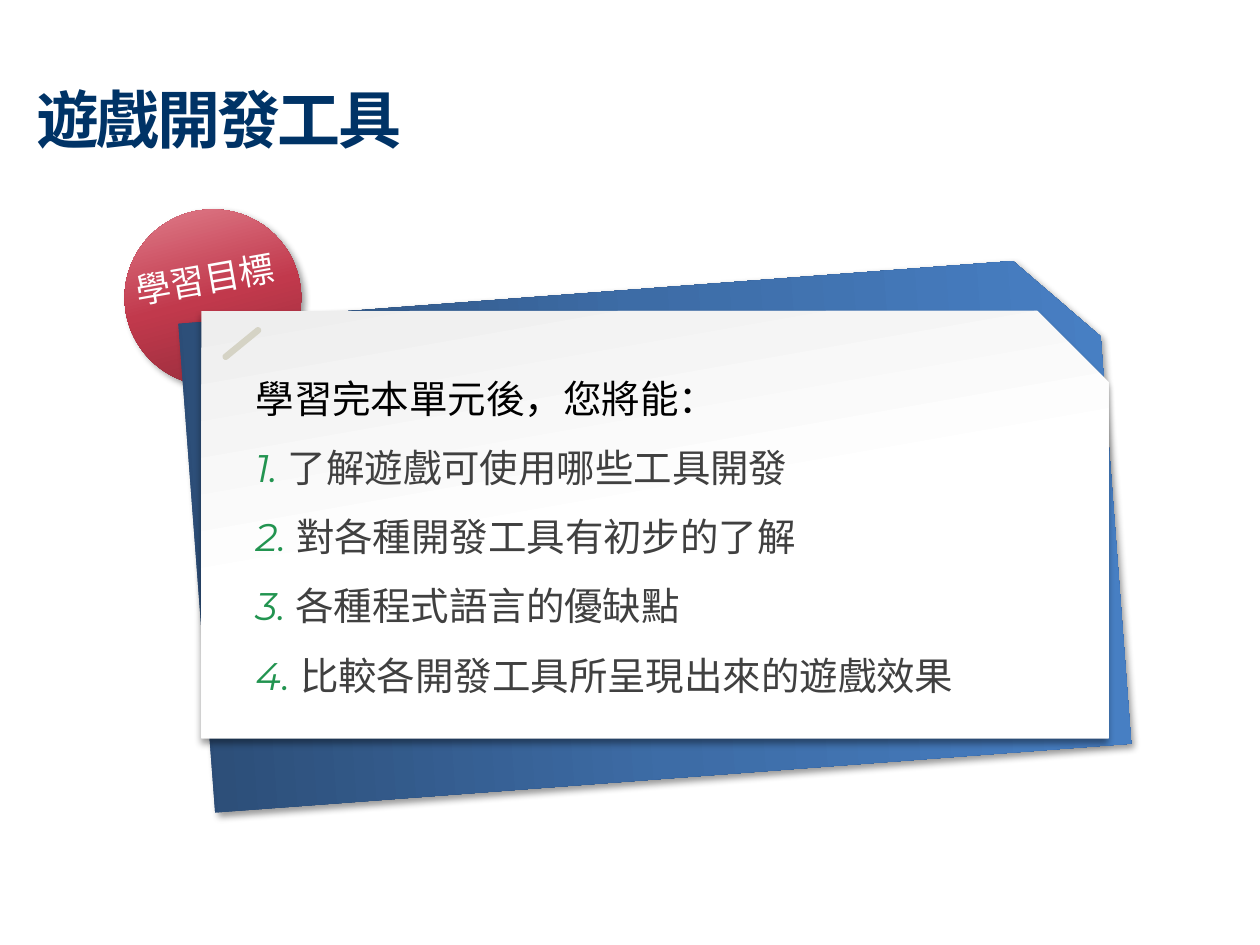
from copy import deepcopy

from lxml import etree
from pptx import Presentation
from pptx.dml.color import RGBColor
from pptx.enum.shapes import MSO_SHAPE
from pptx.enum.text import MSO_ANCHOR, MSO_AUTO_SIZE, PP_ALIGN
from pptx.oxml import parse_xml
from pptx.oxml.ns import nsdecls, qn
from pptx.util import Cm, Pt

OVAL = MSO_SHAPE.OVAL
SNIPPED = MSO_SHAPE.SNIP_1_RECTANGLE
ROUNDED = MSO_SHAPE.ROUNDED_RECTANGLE
MIDDLE, TOP = MSO_ANCHOR.MIDDLE, MSO_ANCHOR.TOP
LEFT = PP_ALIGN.LEFT
NO_FIT = MSO_AUTO_SIZE.NONE

WHITE = RGBColor(0xFF, 0xFF, 0xFF)
BLACK = RGBColor(0x00, 0x00, 0x00)
NAVY = RGBColor(0x00, 0x33, 0x66)
GREEN = RGBColor(0x22, 0x94, 0x50)
DARK_GREY = RGBColor(0x40, 0x40, 0x40)
BEIGE = RGBColor(0xD5, 0xD3, 0xC5)
REDS = [RGBColor(0x87, 0x28, 0x36), RGBColor(0xC1, 0x39, 0x4C), RGBColor(0xE6, 0x8A, 0x97)]
BLUES = [RGBColor(0x2B, 0x4C, 0x75), RGBColor(0x3D, 0x6C, 0xA6), RGBColor(0x48, 0x80, 0xC5)]
PAPER = [RGBColor(0xEE, 0xEE, 0xEE), WHITE, WHITE]

BODY_FONT = "Noto Sans CJK JP"
TITLE_FONT = "Noto Sans CJK SC"
NUMBER_FONT = "Montserrat"


def add_card(shapes, kind, box, colors, angle=0, rotation=0, shadow_angle=None):
    """Add a borderless shape with a plain or three-stop gradient fill."""
    card = shapes.add_shape(kind, *[Cm(length) for length in box])
    card.rotation = rotation
    card.line.fill.background()
    card.shadow.inherit = False
    properties = card._element.spPr
    if len(colors) == 1:
        card.fill.solid()
        card.fill.fore_color.rgb = colors[0]
    else:
        card.fill.gradient()
        card.fill.gradient_angle = -angle % 360
        stops = properties.find(qn("a:gradFill")).find(qn("a:gsLst"))
        stops.append(deepcopy(stops[-1]))
        for stop, color, position in zip(card.fill.gradient_stops, colors, (0, 0.5, 1)):
            stop.color.rgb = color
            stop.position = position
    if shadow_angle is not None:
        properties.find(qn("a:effectLst")).append(parse_xml(
            f'<a:outerShdw {nsdecls("a")} blurRad="{Pt(4)}" dist="{Pt(3)}" '
            f'dir="{shadow_angle * 60000}" algn="tl" rotWithShape="0">'
            '<a:srgbClr val="000000"><a:alpha val="40000"/></a:srgbClr></a:outerShdw>'))
    return card


def add_text(paragraph, text, font=BODY_FONT, size=22, color=BLACK, bold=False, italic=False):
    """Add a formatted run and return it."""
    run = paragraph.add_run()
    run.text = text
    run.font.name = font
    run.font.size = Pt(size)
    run.font.bold = bold
    run.font.italic = italic
    run.font.color.rgb = color
    east_asian = etree.SubElement(run._r.get_or_add_rPr(), qn("a:ea"))
    east_asian.set("typeface", font)
    return run


prs = Presentation()
prs.slide_width, prs.slide_height = Cm(25.4), Cm(19.05)
slide = prs.slides.add_slide(prs.slide_layouts[1])
title, goals = slide.placeholders

# Red badge behind the cards
add_card(slide.shapes, OVAL, (2.51, 4.22, 3.56, 3.56), REDS,
         angle=90, rotation=165.1, shadow_angle=45)

# Tilted blue card, paper card and its clip
cards = slide.shapes.add_group_shape().shapes
add_card(cards, SNIPPED, (3.94, 5.82, 18.52, 9.88), BLUES, rotation=355.7, shadow_angle=45)
add_card(cards, SNIPPED, (4.06, 6.27, 18.29, 8.61), PAPER, angle=80, shadow_angle=90)
clip = add_card(cards, ROUNDED, (4.39, 6.86, 0.97, 0.13), [BEIGE], rotation=320.7)
clip.adjustments[0] = 0.5

# Badge label
badge_label = slide.shapes.add_textbox(Cm(2.46), Cm(5), Cm(4.17), Cm(1.12))
badge_label.rotation = 349.9
badge_label.text_frame.word_wrap = True
add_text(badge_label.text_frame.paragraphs[0], "學習目標", size=20, color=WHITE)

# Title
title.left, title.top, title.width, title.height = Cm(0), Cm(1.7), Cm(17.78), Cm(1.35)
title.text_frame.auto_size = NO_FIT
title.text_frame.vertical_anchor = MIDDLE
heading = title.text_frame.paragraphs[0]
heading.alignment = LEFT
heading._p.get_or_add_pPr().set("marL", str(Cm(0.48)))
heading_run = add_text(heading, "遊戲開發工具", font=TITLE_FONT, size=36, color=NAVY, bold=True)
heading_format = heading_run._r.get_or_add_rPr()
heading_format.set("spc", "-150")
heading_format.insert(0, parse_xml(
    f'<a:ln {nsdecls("a")} w="{Pt(0.75)}"><a:solidFill><a:srgbClr val="{WHITE}"/>'
    '</a:solidFill></a:ln>'))

# Learning goals, brought in front of the cards
slide.shapes._spTree.append(goals._element)
goals.left, goals.top, goals.width, goals.height = Cm(4.9), Cm(6.96), Cm(17.65), Cm(7.32)
goals.text_frame.auto_size = NO_FIT
goals.text_frame.vertical_anchor = TOP
GOAL_LINES = [
    "學習完本單元後，您將能：",
    "了解遊戲可使用哪些工具開發",
    "對各種開發工具有初步的了解",
    "各種程式語言的優缺點",
    "比較各開發工具所呈現出來的遊戲效果",
]
for number, line in enumerate(GOAL_LINES):
    goal = goals.text_frame.add_paragraph() if number else goals.text_frame.paragraphs[0]
    goal_format = goal._p.get_or_add_pPr()
    goal_format.set("marL", "0")
    goal_format.set("indent", "0")
    etree.SubElement(goal_format, qn("a:buNone"))
    goal.line_spacing = 1.5
    goal.space_before = Pt(0)
    if number:
        add_text(goal, f"{number}. ", font=NUMBER_FONT, color=GREEN, italic=True)
    add_text(goal, line, color=DARK_GREY if number else BLACK)

prs.save("out.pptx")
